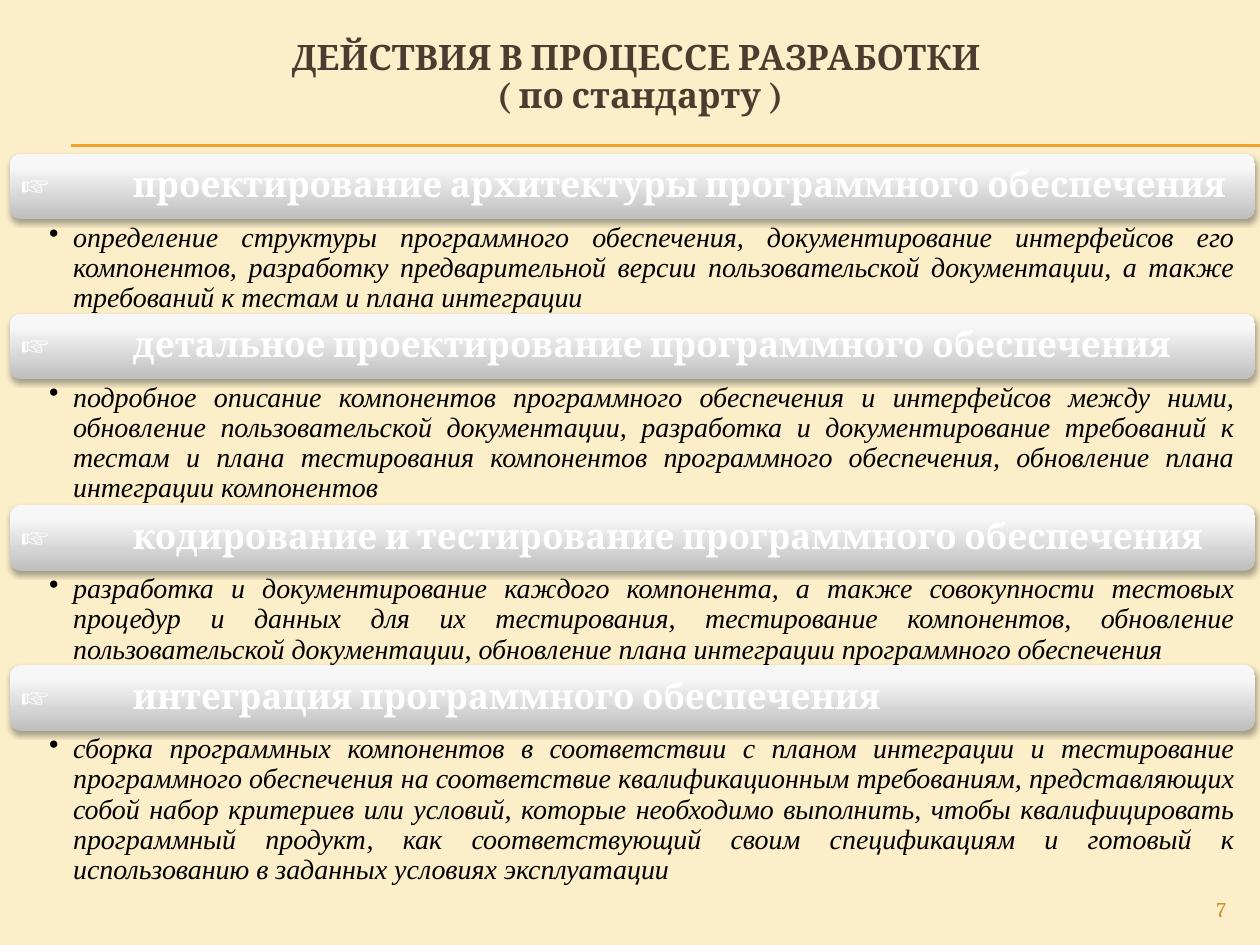
from lxml import etree
from pptx import Presentation
from pptx.dml.color import RGBColor
from pptx.enum.shapes import MSO_CONNECTOR, MSO_SHAPE
from pptx.enum.text import MSO_ANCHOR, PP_ALIGN
from pptx.oxml import parse_xml
from pptx.oxml.ns import nsdecls, qn
from pptx.util import Inches, Pt

STRAIGHT = MSO_CONNECTOR.STRAIGHT
ROUNDED = MSO_SHAPE.ROUNDED_RECTANGLE
TOP, MIDDLE = MSO_ANCHOR.TOP, MSO_ANCHOR.MIDDLE
LEFT, CENTER, RIGHT, JUSTIFY = PP_ALIGN.LEFT, PP_ALIGN.CENTER, PP_ALIGN.RIGHT, PP_ALIGN.JUSTIFY

BAR_LEFT, BAR_WIDTH, BAR_HEIGHT = 0.08, 9.88, 0.52
FIRST_TOP = 1.22
GRADIENT = [(0, "BEBEBE"), (80, "F7F7F7"), (100, "F8F8F8")]

ACTIVITIES = [
    ("проектирование архитектуры программного обеспечения", 0.75,
     "определение структуры программного обеспечения, документирование интерфейсов его "
     "компонентов, разработку предварительной версии пользовательской документации, а также "
     "требований к тестам и плана интеграции"),
    ("детальное проектирование программного обеспечения", 1,
     "подробное описание компонентов программного обеспечения и интерфейсов между ними, "
     "обновление пользовательской документации, разработка и документирование требований к "
     "тестам и плана тестирования компонентов программного обеспечения, обновление плана "
     "интеграции компонентов"),
    ("кодирование и тестирование программного обеспечения", 0.75,
     "разработка и документирование каждого компонента, а также совокупности тестовых "
     "процедур и данных для их тестирования, тестирование компонентов, обновление "
     "пользовательской документации, обновление плана интеграции программного обеспечения"),
    ("интеграция программного обеспечения", 1.22,
     "сборка программных компонентов в соответствии с планом интеграции и тестирование "
     "программного обеспечения на соответствие квалификационным требованиям, представляющих "
     "собой набор критериев или условий, которые необходимо выполнить, чтобы квалифицировать "
     "программный продукт, как соответствующий своим спецификациям и готовый к "
     "использованию в заданных условиях эксплуатации"),
]


def color(value):
    return RGBColor.from_string(value)


def add_run(paragraph, text, size, font, fill, bold=False, italic=False):
    paragraph.add_run().text = text
    run_font = paragraph.runs[-1].font
    run_font.size, run_font.name = Pt(size), font
    run_font.bold, run_font.italic = bold, italic
    run_font.color.rgb = color(fill)


def write_text(shape, *lines, align=LEFT, anchor=MIDDLE, insets=(0.1, 0.05, 0.1, 0.05),
               indent=0, spacing=0.9, **run_format):
    frame = shape.text_frame
    frame.word_wrap = True
    frame.vertical_anchor = anchor
    frame.margin_left, frame.margin_top, frame.margin_right, frame.margin_bottom = map(Inches, insets)
    paragraph = frame.paragraphs[0]
    paragraph.alignment, paragraph.line_spacing = align, spacing
    properties = paragraph._p.get_or_add_pPr()
    properties.set("marL", str(Inches(indent)))
    properties.set("indent", str(-Inches(indent)))
    for index, line in enumerate(lines):
        if index:
            paragraph.add_line_break()
        add_run(paragraph, line, **run_format)
    return paragraph


def add_box(slide, left, top, width, height):
    return slide.shapes.add_textbox(Inches(left), Inches(top), Inches(width), Inches(height))


def add_rule(slide, top):
    rule = slide.shapes.add_connector(STRAIGHT, Inches(0.56), Inches(top), Inches(10), Inches(top))
    rule.line.color.rgb = color("F0A22E")
    rule.line.width = Pt(0.75)
    etree.SubElement(rule._element.spPr, qn("a:effectLst"))


def add_heading_bar(slide, top, text):
    bar = slide.shapes.add_shape(
        ROUNDED, Inches(BAR_LEFT), Inches(top), Inches(BAR_WIDTH), Inches(BAR_HEIGHT))
    stops = "".join(f'<a:gs pos="{position * 1000}"><a:srgbClr val="{value}"/></a:gs>'
                    for position, value in GRADIENT)
    bar._element.spPr.append(parse_xml(
        f'<a:gradFill {nsdecls("a")} rotWithShape="1"><a:gsLst>{stops}</a:gsLst>'
        '<a:lin ang="16200000" scaled="0"/></a:gradFill>'))
    bar.line.fill.background()
    bar.shadow.inherit = False
    bar._element.spPr.find(qn("a:effectLst")).append(parse_xml(
        f'<a:outerShdw {nsdecls("a")} blurRad="{Pt(3.1)}" dist="{Pt(1.8)}" dir="5400000" '
        'rotWithShape="0"><a:srgbClr val="000000"><a:alpha val="35000"/></a:srgbClr></a:outerShdw>'))
    paragraph = write_text(bar, "☞\t", insets=(0.06,) * 4, indent=0.89,
                           size=20, font="Cambria", fill="FFFFFF")
    add_run(paragraph, text, size=20, font="Cambria", fill="FFFFFF", bold=True)


def add_description(slide, top, height, text):
    box = add_box(slide, BAR_LEFT, top, BAR_WIDTH, height)
    paragraph = write_text(box, text, align=JUSTIFY, anchor=TOP, insets=(0.31, 0.03, 0.16, 0.03),
                           indent=0.19, size=16, font="Times New Roman", fill="000000", italic=True)
    etree.SubElement(paragraph._p.get_or_add_pPr(), qn("a:buChar")).set("char", "•")


def add_title(slide):
    title = slide.shapes.title
    title.left, title.top, title.width, title.height = map(Inches, (0.33, 0.16, 9.5, 0.92))
    write_text(title, "ДЕЙСТВИЯ В ПРОЦЕССЕ РАЗРАБОТКИ ", "( по стандарту )", align=CENTER,
               size=20, font="Cambria", fill="4E3B30", bold=True)


def main():
    presentation = Presentation()
    presentation.slide_width, presentation.slide_height = Inches(10), Inches(7.5)
    slide = presentation.slides.add_slide(presentation.slide_layouts[5])
    slide.background.fill.solid()
    slide.background.fill.fore_color.rgb = color("FBEEC9")
    for top in (1.15, 1.16):
        add_rule(slide, top)
    add_title(slide)
    top = FIRST_TOP
    for heading, height, description in ACTIVITIES:
        add_heading_bar(slide, top, heading)
        add_description(slide, top + BAR_HEIGHT, height, description)
        top += BAR_HEIGHT + height
    write_text(add_box(slide, 9, 7.08, 0.83, 0.27), "7", align=RIGHT, spacing=1,
               size=12, font="Cambria", fill="D48F29")
    presentation.save("out.pptx")


if __name__ == "__main__":
    main()
